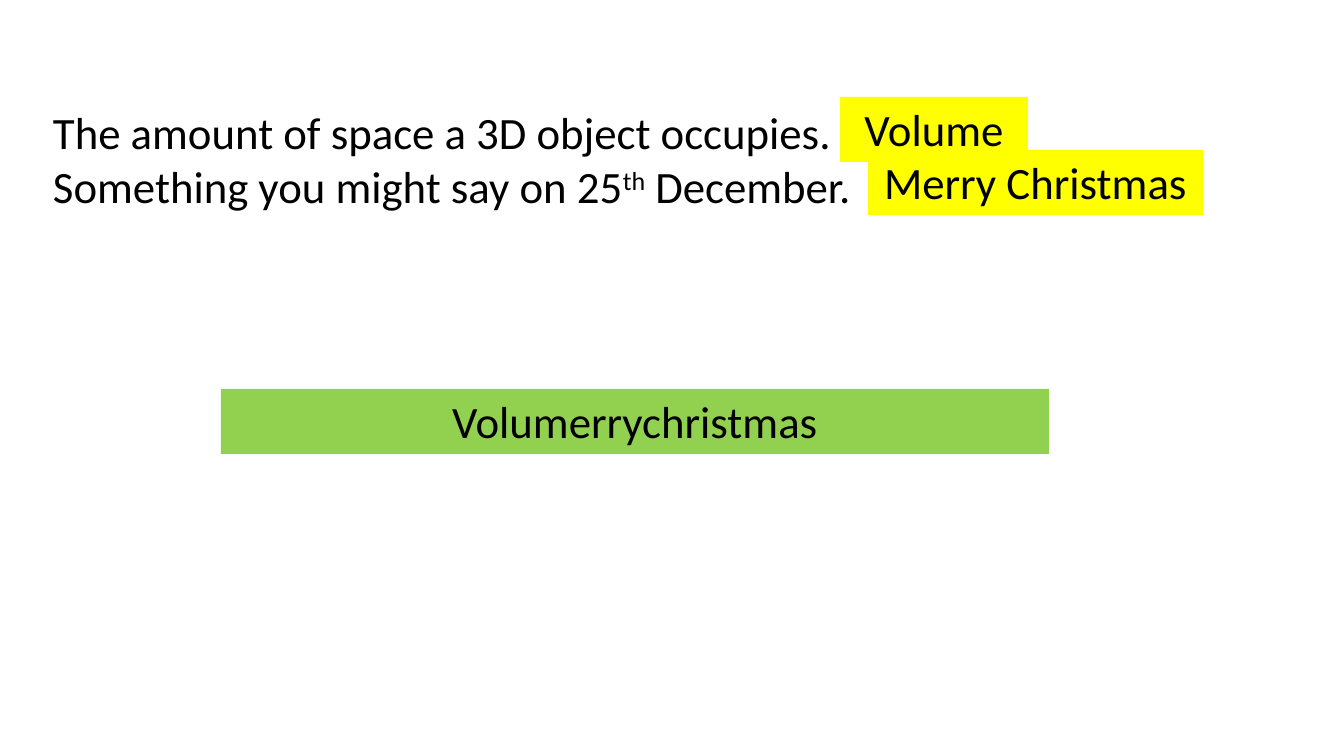
"""Build a word-puzzle slide with two clues, their answers and the blend."""
from pptx import Presentation
from pptx.dml.color import RGBColor as RGB
from pptx.enum.shapes import MSO_SHAPE as Shape
from pptx.enum.text import MSO_ANCHOR as Anchor, MSO_AUTO_SIZE as Fit, PP_ALIGN as Align
from pptx.util import Emu, Pt

COLORS = {"text": "000000", "answer": "FFFF00", "blend": "92D050"}
SCALE = 914400 / 100.8


def px(n):
    return Emu(round(n * SCALE))


class Board:
    font = "Calibri"
    size = 32
    high = 65

    def __init__(self, deck):
        self.slide = deck.slides.add_slide(deck.slide_layouts[6])

    def style(self, para):
        para.font.name = self.font
        para.font.size = Pt(self.size)
        para.font.color.rgb = RGB.from_string(COLORS["text"])

    def clues(self, x, y, w, h, lines):
        box = self.slide.shapes.add_textbox(*map(px, (x, y, w, h)))
        frame = box.text_frame
        frame.word_wrap = True
        frame.auto_size = Fit.SHAPE_TO_FIT_TEXT
        for i, line in enumerate(lines):
            para = frame.add_paragraph() if i else frame.paragraphs[0]
            for text, raised in line:
                run = para.add_run()
                run.text = text
                if raised:
                    run._r.get_or_add_rPr().set("baseline", "30000")
            self.style(para)

    def label(self, x, y, w, text, color):
        box = self.slide.shapes.add_shape(Shape.RECTANGLE, *map(px, (x, y, w, self.high)))
        box.shadow.inherit = False
        box.fill.solid()
        box.fill.fore_color.rgb = RGB.from_string(COLORS[color])
        box.line.fill.background()
        frame = box.text_frame
        frame.word_wrap = True
        frame.auto_size = Fit.SHAPE_TO_FIT_TEXT
        frame.vertical_anchor = Anchor.TOP
        para = frame.paragraphs[0]
        para.text = text
        para.alignment = Align.CENTER
        self.style(para)


def main():
    deck = Presentation()
    deck.slide_width, deck.slide_height = px(1344), px(756)
    board = Board(deck)
    board.clues(43, 100, 1042, 119, [
        [("The amount of space a 3D object occupies.", False)],
        [("Something you might say on 25", False), ("th", True), (" December.", False)],
    ])
    board.label(840, 97, 188, "Volume", "answer")
    board.label(868, 150, 335, "Merry Christmas", "answer")
    board.label(221, 389, 828, "Volumerrychristmas", "blend")
    deck.save("out.pptx")


if __name__ == "__main__":
    main()
